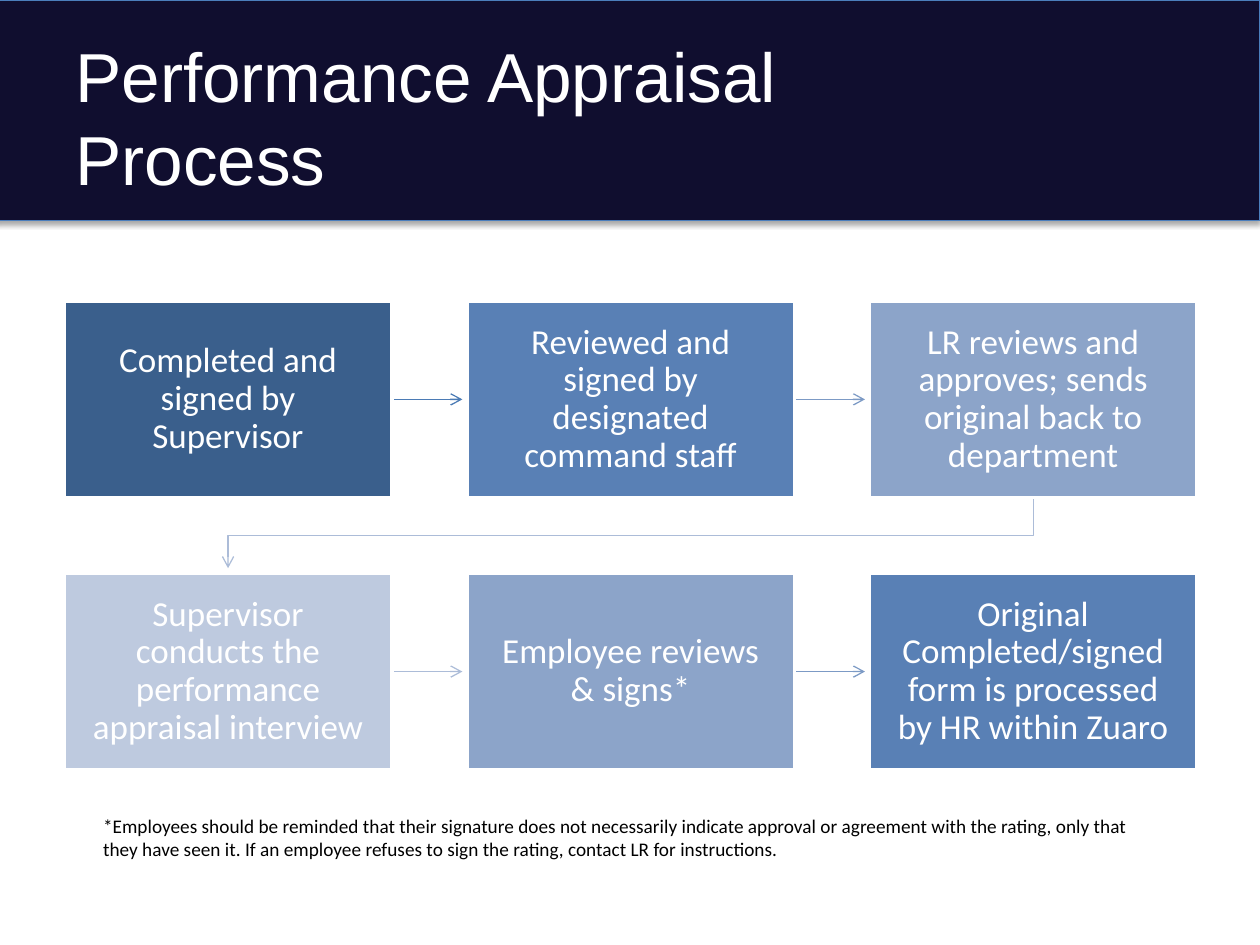
from lxml import etree
from pptx import Presentation
from pptx.dml.color import RGBColor
from pptx.enum.shapes import MSO_CONNECTOR, MSO_SHAPE
from pptx.enum.text import MSO_ANCHOR, PP_ALIGN
from pptx.oxml import parse_xml
from pptx.oxml.ns import nsdecls, qn
from pptx.util import Inches, Pt

RECTANGLE = MSO_SHAPE.RECTANGLE
STRAIGHT = MSO_CONNECTOR.STRAIGHT
MIDDLE, TOP = MSO_ANCHOR.MIDDLE, MSO_ANCHOR.TOP
CENTER, LEFT = PP_ALIGN.CENTER, PP_ALIGN.LEFT

TITLE_LINES = ["Performance Appraisal", "Process"]
STEPS = [
    ("Completed and signed by Supervisor", "3A5F8C", "4B7BB5"),
    ("Reviewed and signed by designated command staff", "5980B5", "7C9AC5"),
    ("LR reviews and approves; sends original back to department", "8CA4C9", "ACBCD8"),
    ("Supervisor conducts the performance appraisal interview", "BECADF", "ACBCD8"),
    ("Employee reviews & signs*", "8CA4C9", "7C9AC5"),
    ("Original Completed/signed form is processed by HR within Zuaro", "5980B5", None),
]
FOOTNOTE = (
    "*Employees should be reminded that their signature does not necessarily indicate "
    "approval or agreement with the rating, only that they have seen it. If an employee "
    "refuses to sign the rating, contact LR for instructions."
)

COLUMNS = 3
GRID_LEFT, GRID_TOP = 0.51, 2.39
BOX_WIDTH, BOX_HEIGHT = 2.6, 1.56
COLUMN_STEP, ROW_STEP = 3.195, 2.16
ARROW_LENGTH = 0.56
TURN_DROP = 0.3


def color(value):
    return RGBColor.from_string(value)


def style_line(line, value, width):
    line.color.rgb = color(value)
    line.width = Pt(width)


def add_rectangle(slide, left, top, width, height, fill, outline, outline_width):
    shape = slide.shapes.add_shape(
        RECTANGLE, Inches(left), Inches(top), Inches(width), Inches(height))
    shape.shadow.inherit = False
    shape.fill.solid()
    shape.fill.fore_color.rgb = color(fill)
    style_line(shape.line, outline, outline_width)
    return shape


def write_text(shape, lines, font, size, value, anchor=TOP, align=LEFT):
    frame = shape.text_frame
    frame.word_wrap = True
    frame.vertical_anchor = anchor
    paragraph = frame.paragraphs[0]
    paragraph.alignment = align
    for index, line in enumerate(lines):
        if index:
            paragraph.add_line_break()
        run = paragraph.add_run()
        run.text = line
        run.font.name = font
        run.font.size = Pt(size)
        run.font.color.rgb = color(value)
    return frame


def add_text_box(slide, left, top, width, height):
    return slide.shapes.add_textbox(
        Inches(left), Inches(top), Inches(width), Inches(height))


def add_arrowhead(line_shape):
    line = line_shape.line._get_or_add_ln()
    etree.SubElement(line, qn("a:tailEnd"), type="arrow")


def add_header(slide):
    band = add_rectangle(slide, -0.04, 0, 10.04, 1.75, "100E2F", "4B7EBC", 0.75)
    effects = band._element.spPr.find(qn("a:effectLst"))
    effects.append(parse_xml(
        f'<a:outerShdw {nsdecls("a")} blurRad="{Pt(3.1)}" dist="{Pt(1.8)}" '
        'dir="5400000" rotWithShape="0"><a:srgbClr val="000000">'
        '<a:alpha val="35000"/></a:srgbClr></a:outerShdw>'))
    title = add_text_box(slide, 0.5, 0.3, 9, 1.25)
    write_text(title, TITLE_LINES, "Arial", 39.6, "FFFFFF", MIDDLE)


def add_step(slide, left, top, text, fill):
    box = add_rectangle(slide, left, top, BOX_WIDTH, BOX_HEIGHT, fill, "FFFFFF", 2)
    frame = write_text(box, [text], "Calibri", 20, "FFFFFF", MIDDLE, CENTER)
    frame.margin_left = frame.margin_right = Inches(0.16)
    frame.margin_top = frame.margin_bottom = Inches(0.16)
    frame.paragraphs[0].line_spacing = 0.9


def add_straight_arrow(slide, left, top, value):
    start = left + BOX_WIDTH
    middle = top + BOX_HEIGHT / 2
    arrow = slide.shapes.add_connector(
        STRAIGHT, Inches(start), Inches(middle), Inches(start + ARROW_LENGTH), Inches(middle))
    etree.SubElement(arrow._element.spPr, qn("a:effectLst"))
    style_line(arrow.line, value, 0.75)
    add_arrowhead(arrow)


def add_turn_arrow(slide, left, top, value):
    start_x = left + BOX_WIDTH / 2
    end_x = GRID_LEFT + BOX_WIDTH / 2
    bottom = top + BOX_HEIGHT
    turn = bottom + TURN_DROP
    points = [(start_x, turn), (end_x, turn), (end_x, bottom + ARROW_LENGTH)]
    builder = slide.shapes.build_freeform(Inches(start_x), Inches(bottom))
    builder.add_line_segments([(Inches(x), Inches(y)) for x, y in points], close=False)
    arrow = builder.convert_to_shape()
    arrow.shadow.inherit = False
    arrow.fill.background()
    style_line(arrow.line, value, 0.75)
    add_arrowhead(arrow)


def add_process(slide):
    for index, (text, fill, arrow_color) in enumerate(STEPS):
        row, column = divmod(index, COLUMNS)
        left = GRID_LEFT + column * COLUMN_STEP
        top = GRID_TOP + row * ROW_STEP
        if arrow_color:
            add_arrow = add_turn_arrow if column == COLUMNS - 1 else add_straight_arrow
            add_arrow(slide, left, top, arrow_color)
        add_step(slide, left, top, text, fill)


def main():
    presentation = Presentation()
    presentation.slide_width = Inches(10)
    presentation.slide_height = Inches(7.5)
    slide = presentation.slides.add_slide(presentation.slide_layouts[6])
    add_header(slide)
    add_process(slide)
    footnote = add_text_box(slide, 0.72, 6.41, 8.36, 0.47)
    write_text(footnote, [FOOTNOTE], "Calibri", 11, "000000")
    presentation.save("out.pptx")


if __name__ == "__main__":
    main()
